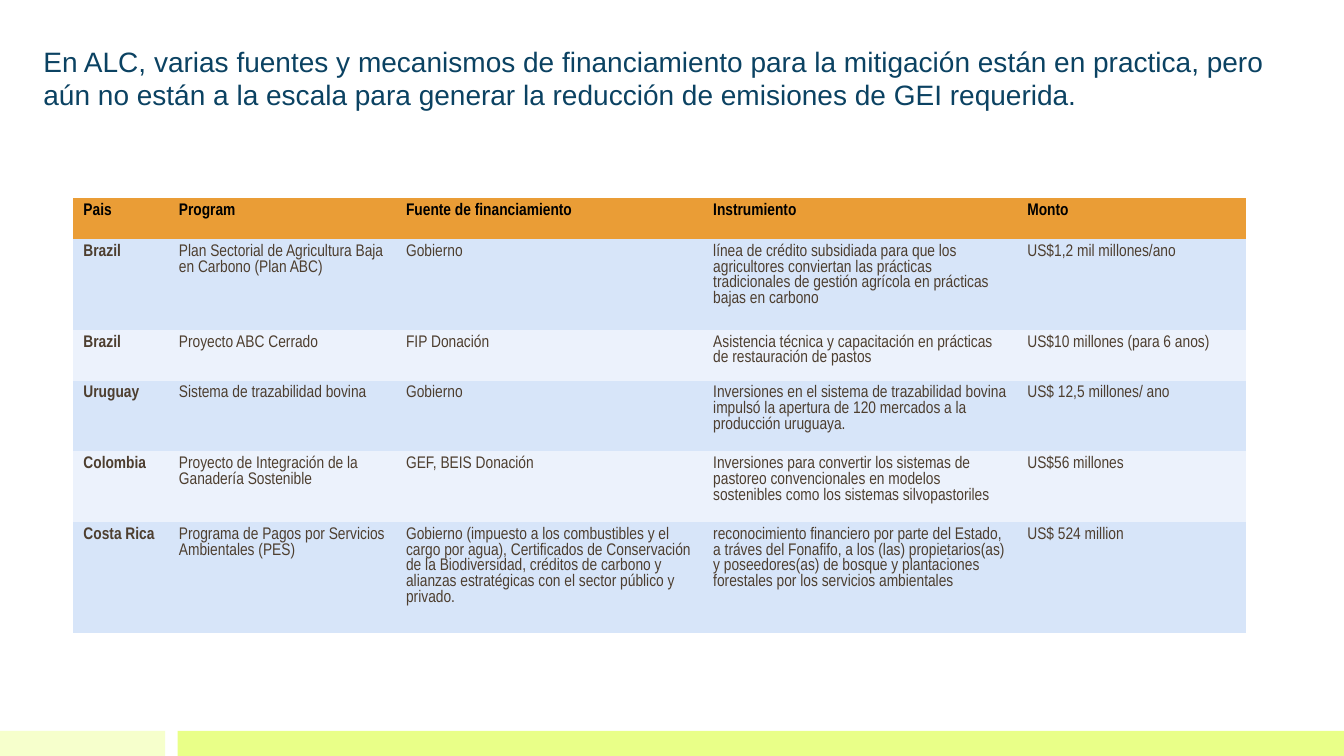
from dataclasses import dataclass

from lxml import etree
from pptx import Presentation
from pptx import util as u
from pptx.dml.color import RGBColor
from pptx.enum import shapes, text
from pptx.oxml import ns


@dataclass(frozen=True)
class Theme:
    """Colours, fonts and type sizes of the slide."""
    title_font: str = "Arial"
    table_font: str = "Arial Narrow"
    title_size: float = 20
    table_size: float = 12
    title_ink: str = "0B4262"
    header_ink: str = "000000"
    body_ink: str = "4D3E2F"
    header_fill: str = "EA9D36"
    row_fills: tuple = ("D7E5F9", "ECF2FC")
    pale_bar: str = "F6FFCC"
    bright_bar: str = "E9FF88"


class SlideBuilder:
    """Adds styled elements to one slide; lengths are in points."""

    def __init__(self, slide, theme):
        """Keep the slide and its theme."""
        self.slide = slide
        self.theme = theme

    def run(self, frame, wording, font, size, ink, bold=False):
        """Write one left-aligned run into the first paragraph."""
        paragraph = frame.paragraphs[0]
        paragraph.alignment = text.PP_ALIGN.LEFT
        paragraph.line_spacing = 1.0
        run = paragraph.add_run()
        run.text = wording
        run.font.name = font
        run.font.size = u.Pt(size)
        run.font.bold = bold
        run.font.color.rgb = RGBColor.from_string(ink)

    def title(self, wording, left, top, width, height):
        """Place and fill the title placeholder."""
        heading = self.slide.shapes.title
        heading.left, heading.top = u.Pt(left), u.Pt(top)
        heading.width, heading.height = u.Pt(width), u.Pt(height)
        frame = heading.text_frame
        frame.word_wrap = True
        frame.auto_size = text.MSO_AUTO_SIZE.SHAPE_TO_FIT_TEXT
        frame.vertical_anchor = text.MSO_ANCHOR.TOP
        self.run(frame, wording, self.theme.title_font, self.theme.title_size,
                 self.theme.title_ink)

    def bar(self, left, top, width, height, fill):
        """Draw a plain filled rectangle."""
        bar = self.slide.shapes.add_shape(
            shapes.MSO_SHAPE.RECTANGLE, u.Pt(left), u.Pt(top), u.Pt(width), u.Pt(height))
        bar.shadow.inherit = False
        bar.fill.solid()
        bar.fill.fore_color.rgb = RGBColor.from_string(fill)
        bar.line.fill.background()

    def paint(self, cell, fill):
        """Give a cell a solid fill and no borders."""
        properties = cell._tc.get_or_add_tcPr()
        for side in ("a:lnL", "a:lnR", "a:lnT", "a:lnB"):
            border = etree.SubElement(properties, ns.qn(side), w="0")
            etree.SubElement(border, ns.qn("a:noFill"))
        cell.fill.solid()
        cell.fill.fore_color.rgb = RGBColor.from_string(fill)
        cell.vertical_anchor = text.MSO_ANCHOR.TOP

    def table(self, rows, left, top, widths, heights):
        """Draw a table with a header row, banded rows and a bold first column."""
        theme = self.theme
        grid = self.slide.shapes.add_table(
            len(rows), len(widths), u.Pt(left), u.Pt(top),
            u.Pt(sum(widths)), u.Pt(sum(heights))).table
        for column, width in zip(grid.columns, widths):
            column.width = u.Pt(width)
        for r, (entries, height) in enumerate(zip(rows, heights)):
            grid.rows[r].height = u.Pt(height)
            header = r == 0
            fill = theme.header_fill if header else theme.row_fills[(r - 1) % 2]
            ink = theme.header_ink if header else theme.body_ink
            for c, wording in enumerate(entries):
                cell = grid.cell(r, c)
                self.paint(cell, fill)
                self.run(cell.text_frame, wording, theme.table_font, theme.table_size,
                         ink, bold=header or c == 0)


PROGRAMS = [
    ("Pais", "Program", "Fuente de financiamiento", "Instrumiento", "Monto"),
    ("Brazil", "Plan Sectorial de Agricultura Baja en Carbono (Plan ABC)", "Gobierno",
     "línea de crédito subsidiada para que los agricultores conviertan las prácticas "
     "tradicionales de gestión agrícola en prácticas bajas en carbono",
     "US$1,2 mil millones/ano"),
    ("Brazil", "Proyecto ABC Cerrado", "FIP Donación",
     "Asistencia técnica y capacitación en prácticas de restauración de pastos",
     "US$10 millones (para 6 anos)"),
    ("Uruguay", "Sistema de trazabilidad bovina", "Gobierno",
     "Inversiones en el sistema de trazabilidad bovina impulsó la apertura de 120 "
     "mercados a la producción uruguaya.",
     "US$ 12,5 millones/ ano"),
    ("Colombia", "Proyecto de Integración de la Ganadería Sostenible", "GEF, BEIS Donación",
     "Inversiones para convertir los sistemas de pastoreo convencionales en modelos "
     "sostenibles como los sistemas silvopastoriles",
     "US$56 millones"),
    ("Costa Rica", "Programa de Pagos por Servicios Ambientales (PES)",
     "Gobierno (impuesto a los combustibles y el cargo por agua), Certificados de "
     "Conservación de la Biodiversidad, créditos de carbono y alianzas estratégicas "
     "con el sector público y privado.",
     "reconocimiento financiero por parte del Estado, a tráves del Fonafifo, a los (las) "
     "propietarios(as) y poseedores(as) de bosque y plantaciones forestales por los "
     "servicios ambientales",
     "US$ 524 million"),
]


def main():
    """Build and save the slide."""
    deck = Presentation()
    deck.slide_width, deck.slide_height = u.Pt(960), u.Pt(540)
    theme = Theme()
    page = SlideBuilder(deck.slides.add_slide(deck.slide_layouts[5]), theme)
    page.bar(0, 522, 118, 18, theme.pale_bar)
    page.bar(127, 522, 833, 18, theme.bright_bar)
    page.title("En ALC, varias fuentes y mecanismos de financiamiento para la mitigación "
               "están en practica, pero aún no están a la escala para generar la reducción "
               "de emisiones de GEI requerida.", 23.8, 28, 912, 55.5)
    page.table(PROGRAMS, 52.4, 141.4, (68.2, 162.3, 219.4, 224.4, 163.4),
               (29.3, 64.5, 36.4, 50.2, 50.5, 79.2))
    deck.save("out.pptx")


if __name__ == "__main__":
    main()
